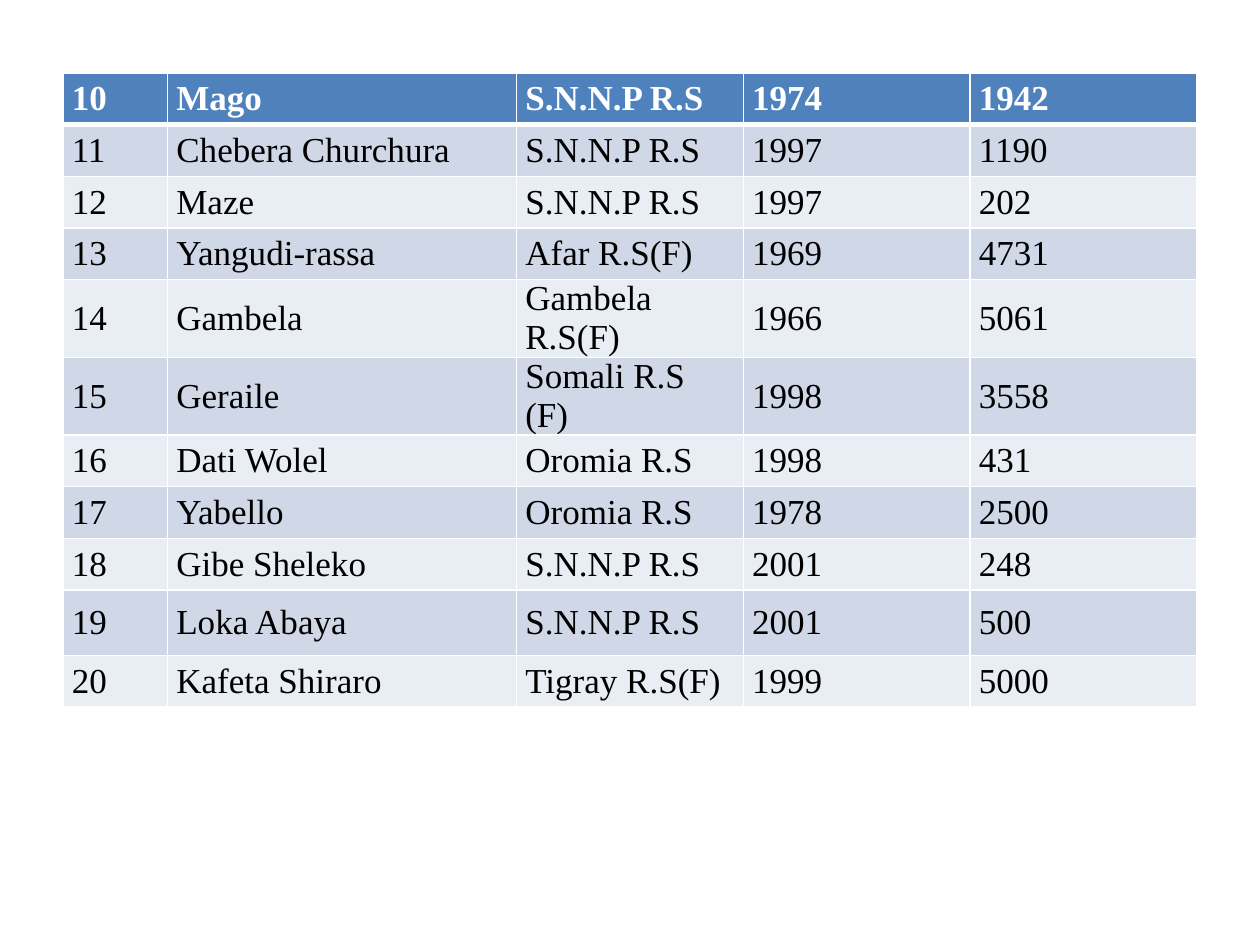
from typing import NamedTuple

from lxml.etree import SubElement
from pptx import Presentation
from pptx.dml.color import RGBColor
from pptx.enum.text import MSO_ANCHOR
from pptx.oxml.ns import qn
from pptx.util import Inches, Pt

WHITE = RGBColor(0xFF, 0xFF, 0xFF)
BLACK = RGBColor(0x00, 0x00, 0x00)
HEADER_BLUE = RGBColor(0x4F, 0x81, 0xBD)
DARK_BAND = RGBColor(0xD0, 0xD8, 0xE8)
LIGHT_BAND = RGBColor(0xE9, 0xED, 0xF4)

FONT_NAME = "Times New Roman"
FONT_SIZE = Pt(20)
COLUMN_WIDTHS = (0.83, 2.77, 1.8, 1.8, 1.8)
ROW_HEIGHT = 0.41
TALL_ROW_HEIGHT = 0.52
TALL_ROW_NUMBER = "19"
THIN_BORDER = Pt(1)
THICK_BORDER = Pt(3)


class Park(NamedTuple):
    number: str
    name: str
    region: str
    year: str
    area: str


class RowStyle(NamedTuple):
    fill: RGBColor
    text: RGBColor
    bold: bool
    top: int
    bottom: int


PARKS = (
    Park("10", "Mago", "S.N.N.P R.S", "1974", "1942"),
    Park("11", "Chebera Churchura", "S.N.N.P R.S", "1997", "1190"),
    Park("12", "Maze", "S.N.N.P R.S", "1997", "202"),
    Park("13", "Yangudi-rassa", "Afar R.S(F)", "1969", "4731"),
    Park("14", "Gambela", "Gambela R.S(F)", "1966", "5061"),
    Park("15", "Geraile", "Somali R.S (F)", "1998", "3558"),
    Park("16", "Dati Wolel", "Oromia R.S", "1998", "431"),
    Park("17", "Yabello", "Oromia R.S", "1978", "2500"),
    Park("18", "Gibe Sheleko", "S.N.N.P R.S", "2001", "248"),
    Park("19", "Loka Abaya", "S.N.N.P R.S", "2001", "500"),
    Park("20", "Kafeta Shiraro", "Tigray R.S(F)", "1999", "5000"),
)


def row_style(index: int) -> RowStyle:
    if index == 0:
        return RowStyle(HEADER_BLUE, WHITE, True, THIN_BORDER, THICK_BORDER)
    fill = DARK_BAND if index % 2 else LIGHT_BAND
    top = THICK_BORDER if index == 1 else THIN_BORDER
    return RowStyle(fill, BLACK, False, top, THIN_BORDER)


def add_border(cell, side: str, width: int) -> None:
    properties = cell._tc.get_or_add_tcPr()
    line = SubElement(properties, qn(f"a:ln{side}"), w=str(width))
    solid_fill = SubElement(line, qn("a:solidFill"))
    SubElement(solid_fill, qn("a:srgbClr"), val=str(WHITE))


def fill_cell(cell, text: str, style: RowStyle) -> None:
    cell.margin_left = cell.margin_right = Inches(0.07)
    cell.margin_top = cell.margin_bottom = 0
    cell.vertical_anchor = MSO_ANCHOR.MIDDLE
    # The schema requires the borders in this order, before the fill.
    for side, width in (("L", THIN_BORDER), ("R", THIN_BORDER),
                        ("T", style.top), ("B", style.bottom)):
        add_border(cell, side, width)
    cell.fill.solid()
    cell.fill.fore_color.rgb = style.fill

    cell.text_frame.text = text
    font = cell.text_frame.paragraphs[0].runs[0].font
    font.name = FONT_NAME
    font.size = FONT_SIZE
    font.bold = style.bold
    font.color.rgb = style.text


def add_park_table(slide) -> None:
    heights = [TALL_ROW_HEIGHT if park.number == TALL_ROW_NUMBER else ROW_HEIGHT
               for park in PARKS]
    table = slide.shapes.add_table(
        len(PARKS), len(COLUMN_WIDTHS), Inches(0.5), Inches(0.58),
        Inches(sum(COLUMN_WIDTHS)), Inches(sum(heights))).table
    for column, width in zip(table.columns, COLUMN_WIDTHS):
        column.width = Inches(width)
    for index, (row, height, park) in enumerate(zip(table.rows, heights, PARKS)):
        row.height = Inches(height)
        for cell, text in zip(row.cells, park):
            fill_cell(cell, text, row_style(index))


def main() -> None:
    presentation = Presentation()
    presentation.slide_width = Inches(10)
    presentation.slide_height = Inches(7.5)
    slide = presentation.slides.add_slide(presentation.slide_layouts[6])
    add_park_table(slide)
    presentation.save("out.pptx")


if __name__ == "__main__":
    main()
